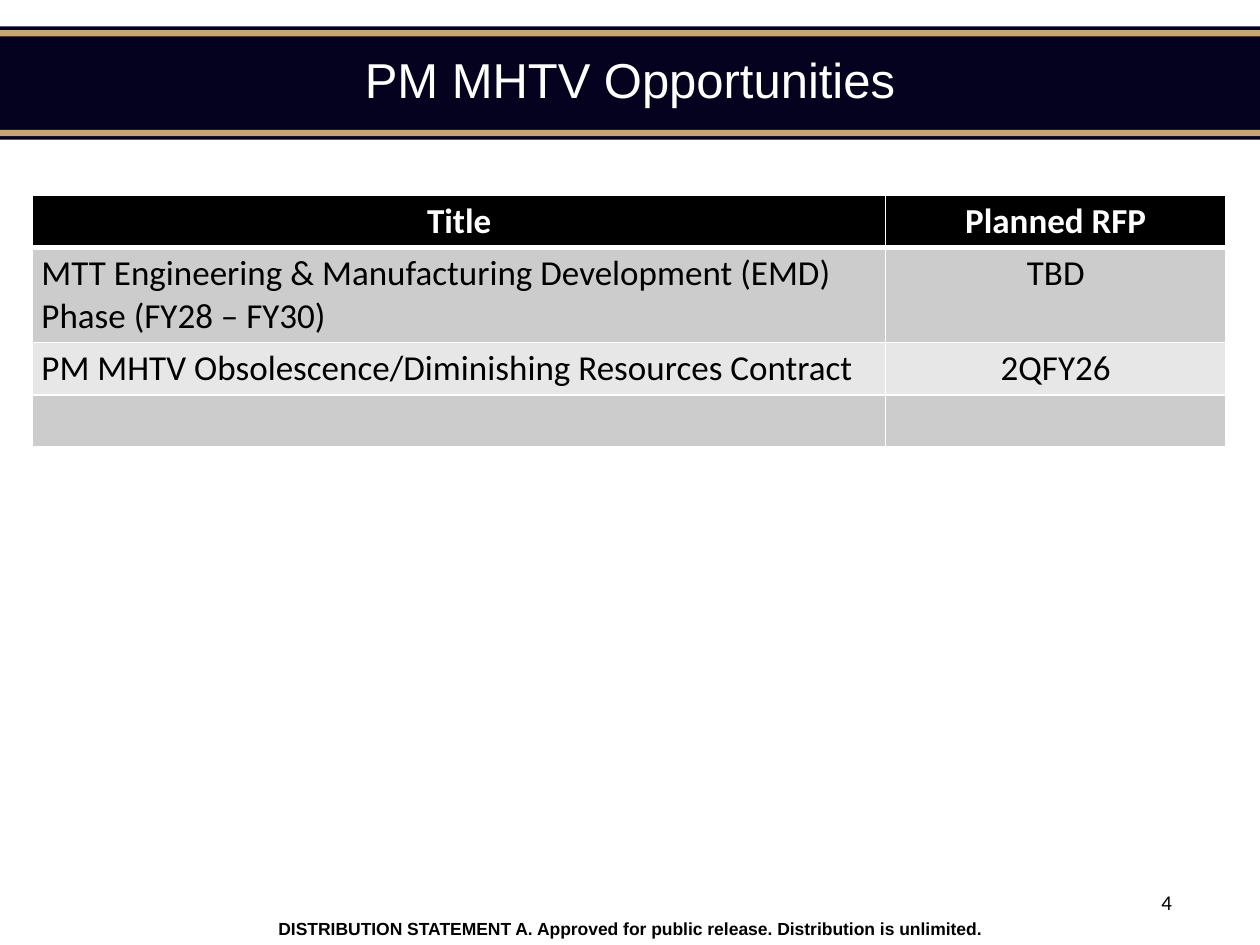
from dataclasses import dataclass

from lxml.etree import SubElement
from pptx import Presentation
from pptx.dml.color import RGBColor
from pptx.enum.shapes import MSO_SHAPE
from pptx.enum.text import MSO_ANCHOR, PP_ALIGN
from pptx.oxml.ns import qn
from pptx.slide import Slide
from pptx.table import _Cell
from pptx.text.text import _Paragraph
from pptx.util import Pt


@dataclass(frozen=True)
class Theme:
    navy: str = "05021F"
    gold: str = "C7A670"
    black: str = "000000"
    white: str = "FFFFFF"
    row_fills: tuple[str, str] = ("CCCCCC", "E7E7E7")
    heading_font: str = "Arial"
    body_font: str = "Calibri"
    title_size: float = 28
    table_size: float = 20
    number_size: float = 12
    footer_size: float = 10
    rule: float = 1
    header_rule: float = 3


@dataclass(frozen=True)
class Box:
    left: float
    top: float
    width: float
    height: float

    def lengths(self) -> list[Pt]:
        return [Pt(v) for v in (self.left, self.top, self.width, self.height)]


@dataclass(frozen=True)
class Band:
    box: Box
    color: str


@dataclass(frozen=True)
class Style:
    font: str
    size: float
    color: str
    align: PP_ALIGN = PP_ALIGN.CENTER
    bold: bool = False


@dataclass(frozen=True)
class Label:
    text: str
    box: Box
    style: Style
    anchor: MSO_ANCHOR = MSO_ANCHOR.MIDDLE
    line_spacing: float = 1.0


@dataclass(frozen=True)
class Opportunity:
    title: str
    planned_rfp: str
    height: float


THEME = Theme()
SLIDE_WIDTH, SLIDE_HEIGHT = 720, 540

BANDS = [
    Band(Box(0, 15.1, SLIDE_WIDTH, 64.8), THEME.navy),
    Band(Box(0, 74.2, SLIDE_WIDTH, 3.6), THEME.gold),
    Band(Box(0, 17.2, SLIDE_WIDTH, 3.6), THEME.gold),
]
LABELS = [
    Label("4", Box(514.8, 501, 162, 28.8),
          Style(THEME.body_font, THEME.number_size, THEME.black, PP_ALIGN.RIGHT)),
    Label("PM MHTV Opportunities", Box(0, -5, SLIDE_WIDTH, 104.4),
          Style(THEME.heading_font, THEME.title_size, THEME.white), line_spacing=0.9),
    Label("DISTRIBUTION STATEMENT A. Approved for public release. Distribution is unlimited.",
          Box(0, 521.3, SLIDE_WIDTH, 18.7),
          Style(THEME.heading_font, THEME.footer_size, THEME.black, bold=True),
          MSO_ANCHOR.TOP),
]

ONE_LINE, TWO_LINES = 29.8, 54.2
COLUMN_WIDTHS = (487.4, 194.4)
TABLE_LEFT, TABLE_TOP = 18.7, 111.8
CELL_MARGINS = {"margin_left": Pt(5), "margin_right": Pt(5),
                "margin_top": Pt(2.7), "margin_bottom": Pt(2.7)}
OPPORTUNITIES = [
    Opportunity("Title", "Planned RFP", ONE_LINE),
    Opportunity("MTT Engineering & Manufacturing Development (EMD) Phase (FY28 – FY30)",
                "TBD", TWO_LINES),
    Opportunity("PM MHTV Obsolescence/Diminishing Resources Contract", "2QFY26", ONE_LINE),
    Opportunity("", "", ONE_LINE),
]


def apply_format(target: object, values: dict[str, object]) -> None:
    for attribute, value in values.items():
        setattr(target, attribute, value)


def write(paragraph: _Paragraph, text: str, style: Style) -> None:
    if text:
        paragraph.add_run().text = text
    paragraph.alignment = style.align
    apply_format(paragraph.font, {"name": style.font, "size": Pt(style.size),
                                  "bold": style.bold})
    paragraph.font.color.rgb = RGBColor.from_string(style.color)
    for run in paragraph.runs:
        apply_format(run.font, {"name": style.font, "size": Pt(style.size),
                                "bold": style.bold})
        run.font.color.rgb = RGBColor.from_string(style.color)


def add_band(slide: Slide, band: Band) -> None:
    bar = slide.shapes.add_shape(MSO_SHAPE.RECTANGLE, *band.box.lengths())
    bar.shadow.inherit = False
    bar.fill.solid()
    bar.fill.fore_color.rgb = RGBColor.from_string(band.color)
    bar.line.fill.background()


def add_label(slide: Slide, label: Label) -> None:
    frame = slide.shapes.add_textbox(*label.box.lengths()).text_frame
    apply_format(frame, {"word_wrap": True, "vertical_anchor": label.anchor})
    paragraph = frame.paragraphs[0]
    paragraph.line_spacing = label.line_spacing
    write(paragraph, label.text, label.style)


def add_borders(cell: _Cell, widths: dict[str, float]) -> None:
    """Draw white rules; the border elements must precede the cell fill."""
    properties = cell._tc.get_or_add_tcPr()
    for side, width in widths.items():
        line = SubElement(properties, qn(f"a:ln{side}"), w=str(Pt(width)))
        SubElement(SubElement(line, qn("a:solidFill")), qn("a:srgbClr"), val=THEME.white)


def fill_cell(cell: _Cell, text: str, row: int, column: int) -> None:
    is_header = row == 0
    align = PP_ALIGN.CENTER if is_header or column else PP_ALIGN.LEFT
    apply_format(cell, CELL_MARGINS)
    add_borders(cell, {"L": THEME.rule, "R": THEME.rule,
                       "T": THEME.header_rule if row == 1 else THEME.rule,
                       "B": THEME.header_rule if is_header else THEME.rule})
    cell.fill.solid()
    fill = THEME.black if is_header else THEME.row_fills[(row - 1) % 2]
    cell.fill.fore_color.rgb = RGBColor.from_string(fill)
    color = THEME.white if is_header else THEME.black
    write(cell.text_frame.paragraphs[0], text,
          Style(THEME.body_font, THEME.table_size, color, align, is_header))


def add_opportunities(slide: Slide) -> None:
    box = Box(TABLE_LEFT, TABLE_TOP, sum(COLUMN_WIDTHS),
              sum(entry.height for entry in OPPORTUNITIES))
    table = slide.shapes.add_table(len(OPPORTUNITIES), len(COLUMN_WIDTHS),
                                   *box.lengths()).table
    for column, width in zip(table.columns, COLUMN_WIDTHS):
        column.width = Pt(width)
    for row, entry in enumerate(OPPORTUNITIES):
        table.rows[row].height = Pt(entry.height)
        for column, text in enumerate((entry.title, entry.planned_rfp)):
            fill_cell(table.cell(row, column), text, row, column)


def main() -> None:
    presentation = Presentation()
    apply_format(presentation, {"slide_width": Pt(SLIDE_WIDTH),
                                "slide_height": Pt(SLIDE_HEIGHT)})
    slide = presentation.slides.add_slide(presentation.slide_layouts[6])
    for band in BANDS:
        add_band(slide, band)
    for label in LABELS:
        add_label(slide, label)
    add_opportunities(slide)
    presentation.save("out.pptx")


if __name__ == "__main__":
    main()
